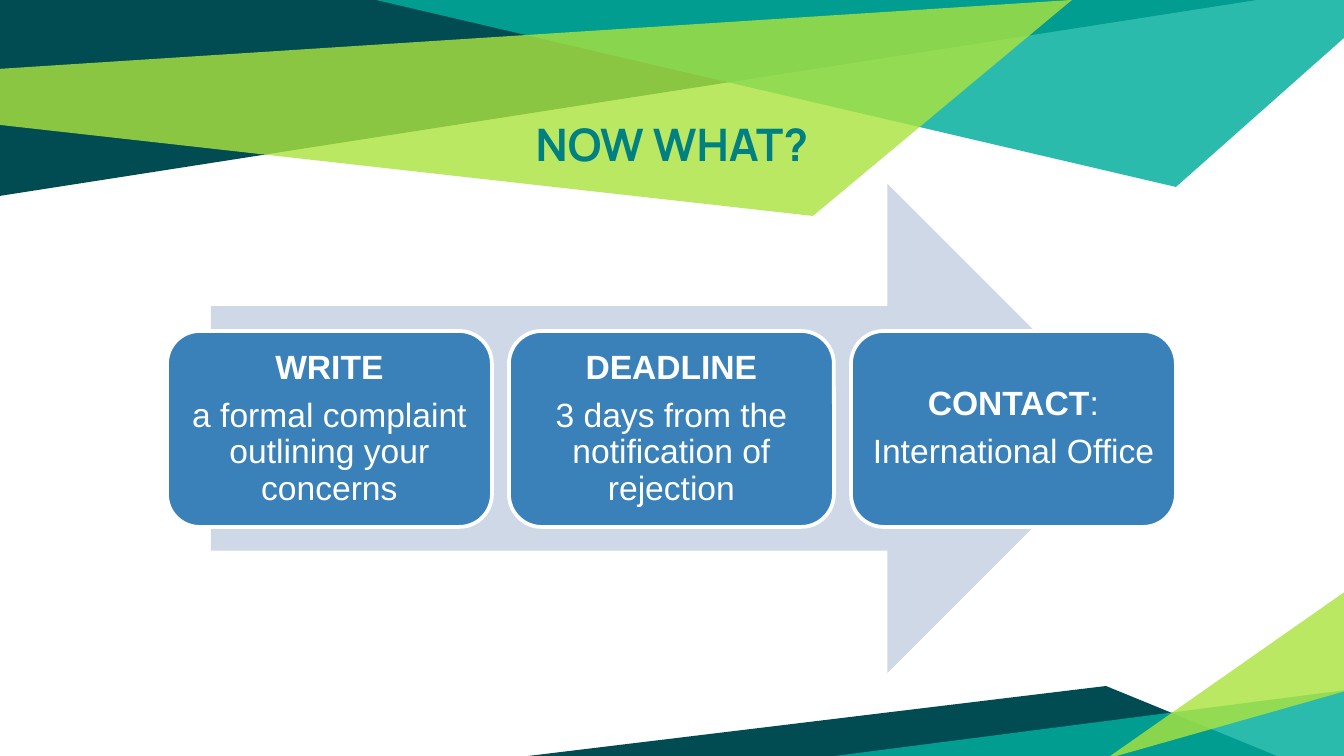
from lxml import etree
from pptx import Presentation
from pptx.dml.color import RGBColor
from pptx.enum.shapes import MSO_SHAPE as SHAPE
from pptx.enum.text import MSO_ANCHOR as ANCHOR, PP_ALIGN as ALIGN
from pptx.oxml.ns import qn
from pptx.util import Pt

WIDTH, HEIGHT = 1344, 756
SCALE = 9144000 / WIDTH  # EMU per px, for a slide 10 inches wide

WHITE = RGBColor(0xFF, 0xFF, 0xFF)
DARK_TEAL = RGBColor(0x00, 0x4C, 0x52)
TEAL = RGBColor(0x00, 0xAE, 0x9D)
LIME = RGBColor(0xAB, 0xE3, 0x3F)
TITLE_TEAL = RGBColor(0x00, 0x80, 0x80)
ARROW_GREY = RGBColor(0xCE, 0xD8, 0xE7)
CARD_BLUE = RGBColor(0x3A, 0x81, 0xBA)

# Corner points, colour, opacity in percent
FACETS = [
    ([(0, 0), (0, 196), (1257, 0)], DARK_TEAL, 100),
    ([(376, 0), (1176, 187), (1344, 38), (1344, 0)], TEAL, 83),
    ([(-1, 69), (0, 125), (813, 216), (1072, 0)], LIME, 81),
    ([(528, 756), (1277, 756), (1106, 686)], DARK_TEAL, 100),
    ([(1347, 690), (1347, 759), (812, 759)], TEAL, 83),
    ([(1346, 691), (1346, 591), (1106, 759)], LIME, 81),
]

# Heading runs as (text, bold), then the body
STEPS = [
    ([("WRITE", True)], "a formal complaint outlining your concerns"),
    ([("DEADLINE", True)], "3 days from the notification of rejection"),
    ([("CONTACT", True), (":", False)], "International Office"),
]
CARD_LEFT, CARD_TOP, CARD_W, CARD_H = 167, 331, 325, 196
CARD_STEP = 342


def px(n):
    return round(n * SCALE)


def box(x, y, w, h):
    return px(x), px(y), px(w), px(h)


def paint(sp, color, opacity=100):
    """Flat fill without outline or shadow."""
    sp.shadow.inherit = False
    sp.line.fill.background()
    sp.fill.solid()
    sp.fill.fore_color.rgb = color
    if opacity < 100:
        clr = sp.fill._xPr.find(qn("a:solidFill"))[0]
        etree.SubElement(clr, qn("a:alpha")).set("val", str(opacity * 1000))


def set_insets(tf, inset):
    tf.margin_left = tf.margin_right = px(inset)
    tf.margin_top = tf.margin_bottom = px(inset)


def add_run(p, text, font, size, color, bold):
    r = p.add_run()
    r.text = text
    r.font.name = font
    r.font.size = Pt(size)
    r.font.color.rgb = color
    r.font.bold = bold


def add_facet(s, points, color, opacity):
    builder = s.shapes.build_freeform(*points[0], scale=SCALE)
    builder.add_line_segments(points[1:], close=True)
    paint(builder.convert_to_shape(), color, opacity)


def add_title(s, text):
    tf = s.shapes.add_textbox(*box(130, 104, 1084, 126)).text_frame
    tf.word_wrap = True
    set_insets(tf, 13)
    p = tf.paragraphs[0]
    p.alignment = ALIGN.CENTER
    add_run(p, text, "Manrope", 24, TITLE_TEAL, True)


def add_arrow(s):
    paint(s.shapes.add_shape(SHAPE.RIGHT_ARROW, *box(211, 184, 921, 489)), ARROW_GREY)


def add_card(s, x, heading, body):
    sp = s.shapes.add_shape(SHAPE.ROUNDED_RECTANGLE, *box(x, CARD_TOP, CARD_W, CARD_H))
    paint(sp, CARD_BLUE)
    sp.line.color.rgb = WHITE
    sp.line.width = Pt(2)
    tf = sp.text_frame
    tf.word_wrap = True
    tf.vertical_anchor = ANCHOR.MIDDLE
    set_insets(tf, 9)
    for p, runs in ((tf.paragraphs[0], heading), (tf.add_paragraph(), [(body, False)])):
        p.alignment = ALIGN.CENTER
        p.line_spacing = 0.9
        p.space_after = Pt(6.3)
        for text, bold in runs:
            add_run(p, text, "Arial", 18, WHITE, bold)


def main():
    prs = Presentation()
    prs.slide_width, prs.slide_height = px(WIDTH), px(HEIGHT)
    s = prs.slides.add_slide(prs.slide_layouts[6])
    for facet in FACETS:
        add_facet(s, *facet)
    add_title(s, "NOW WHAT?")
    add_arrow(s)
    for i, (heading, body) in enumerate(STEPS):
        add_card(s, CARD_LEFT + i * CARD_STEP, heading, body)
    prs.save("out.pptx")


if __name__ == "__main__":
    main()
